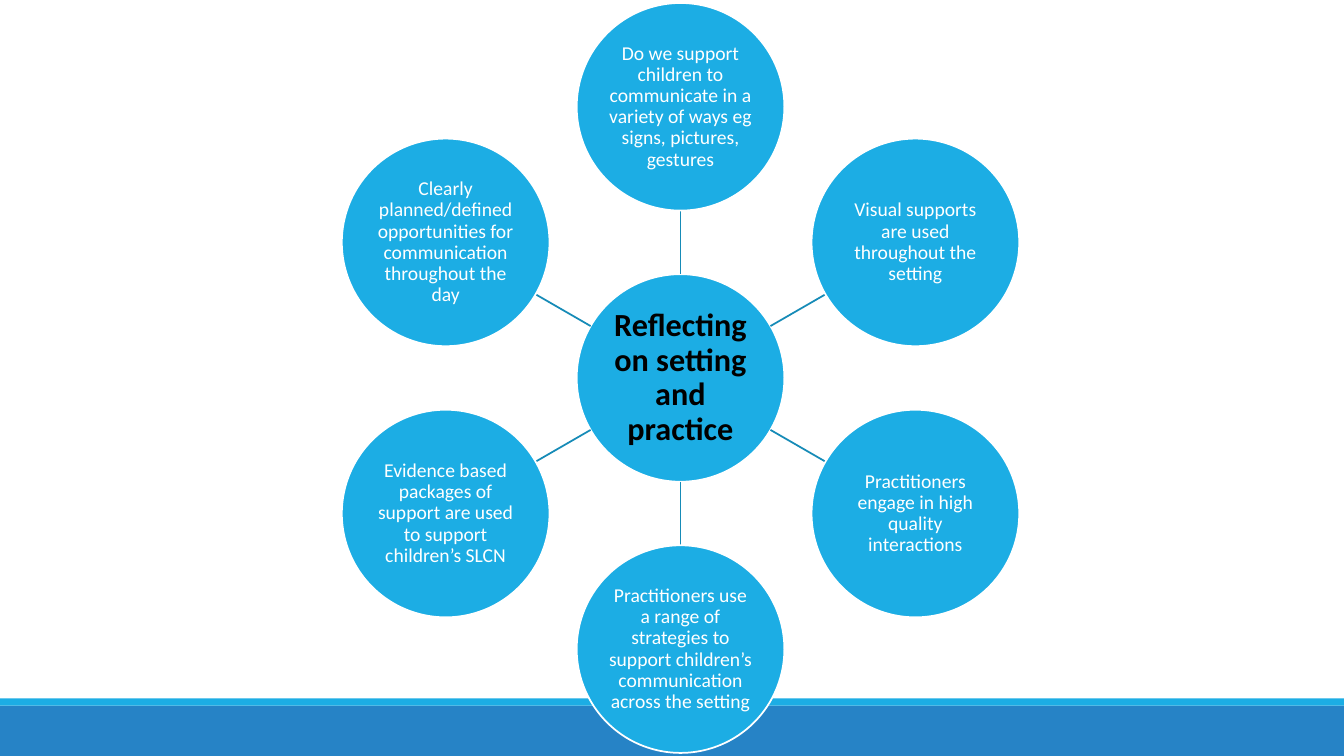
from dataclasses import dataclass
from math import cos, radians, sin

from lxml import etree
from pptx import Presentation
from pptx.dml.color import RGBColor
from pptx.enum.shapes import MSO_CONNECTOR, MSO_SHAPE
from pptx.enum.text import MSO_ANCHOR, PP_ALIGN
from pptx.oxml.ns import qn
from pptx.util import Pt

RECT, OVAL = MSO_SHAPE.RECTANGLE, MSO_SHAPE.OVAL
STRAIGHT = MSO_CONNECTOR.STRAIGHT
MIDDLE, CENTER = MSO_ANCHOR.MIDDLE, PP_ALIGN.CENTER

HUB = "Reflecting on setting and practice"
# Clockwise from the top
TOPICS = [
    "Do we support children to communicate in a variety of ways eg signs, pictures, gestures",
    "Visual supports are used throughout the setting",
    "Practitioners engage in high quality interactions",
    "Practitioners use a range of strategies to support children’s communication across the setting",
    "Evidence based packages of support are used to support children’s SLCN",
    "Clearly planned/defined opportunities for communication throughout the day",
]


@dataclass(frozen=True)
class Theme:
    font: str = "Calibri"
    disc: str = "1CADE4"
    band: str = "2683C6"
    spoke: str = "168BB7"
    white: str = "FFFFFF"
    black: str = "000000"
    hub_size: int = 23
    topic_size: int = 14
    line: float = 1.25


THEME = Theme()
PX = 9144  # EMU in one px, 100 px to the inch
WIDTH, HEIGHT = 1333, 750
BANDS = [(700, 50, THEME.band), (693, 7, THEME.disc)]  # top, height, colour
MID_X, MID_Y = 675, 375
RADIUS, ORBIT = 103, 269


def px(n):
    return round(n * PX)


def polar(angle, dist):
    """Point at a distance from the hub, with the angle clockwise from the top."""
    turn = radians(angle)
    return MID_X + dist * sin(turn), MID_Y - dist * cos(turn)


def add_block(slide, kind, left, top, width, height, fill):
    block = slide.shapes.add_shape(kind, px(left), px(top), px(width), px(height))
    block.shadow.inherit = False
    block.fill.solid()
    block.fill.fore_color.rgb = RGBColor.from_string(fill)
    block.line.fill.background()
    return block


def write(shape, text, size, color, bold=False, inset=1):
    frame = shape.text_frame
    frame.word_wrap = True
    frame.vertical_anchor = MIDDLE
    frame.margin_left = frame.margin_right = px(inset)
    frame.margin_top = frame.margin_bottom = px(inset)
    para = frame.paragraphs[0]
    para.alignment = CENTER
    para.line_spacing = 0.9
    run = para.add_run()
    run.text = text
    run.font.name = THEME.font
    run.font.size = Pt(size)
    run.font.bold = bold
    run.font.color.rgb = RGBColor.from_string(color)


def add_disc(slide, x, y, text, **style):
    disc = add_block(slide, OVAL, x - RADIUS, y - RADIUS, 2 * RADIUS, 2 * RADIUS, THEME.disc)
    disc.line.color.rgb = RGBColor.from_string(THEME.white)
    disc.line.width = Pt(THEME.line)
    write(disc, text, **style)


def add_spoke(slide, angle):
    ends = polar(angle, RADIUS) + polar(angle, ORBIT - RADIUS)
    spoke = slide.shapes.add_connector(STRAIGHT, *map(px, ends))
    spoke.line.color.rgb = RGBColor.from_string(THEME.spoke)
    spoke.line.width = Pt(THEME.line)
    etree.SubElement(spoke._element.spPr, qn("a:effectLst"))


def main():
    deck = Presentation()
    deck.slide_width, deck.slide_height = px(WIDTH), px(HEIGHT)
    slide = deck.slides.add_slide(deck.slide_layouts[6])
    for top, height, fill in BANDS:
        add_block(slide, RECT, 0, top, WIDTH, height, fill)
    add_disc(slide, MID_X, MID_Y, HUB, size=THEME.hub_size,
             color=THEME.black, bold=True, inset=2)
    for i, topic in enumerate(TOPICS):
        angle = i * 360 / len(TOPICS)
        add_spoke(slide, angle)
        add_disc(slide, *polar(angle, ORBIT), topic,
                 size=THEME.topic_size, color=THEME.white)
    deck.save("out.pptx")


if __name__ == "__main__":
    main()
